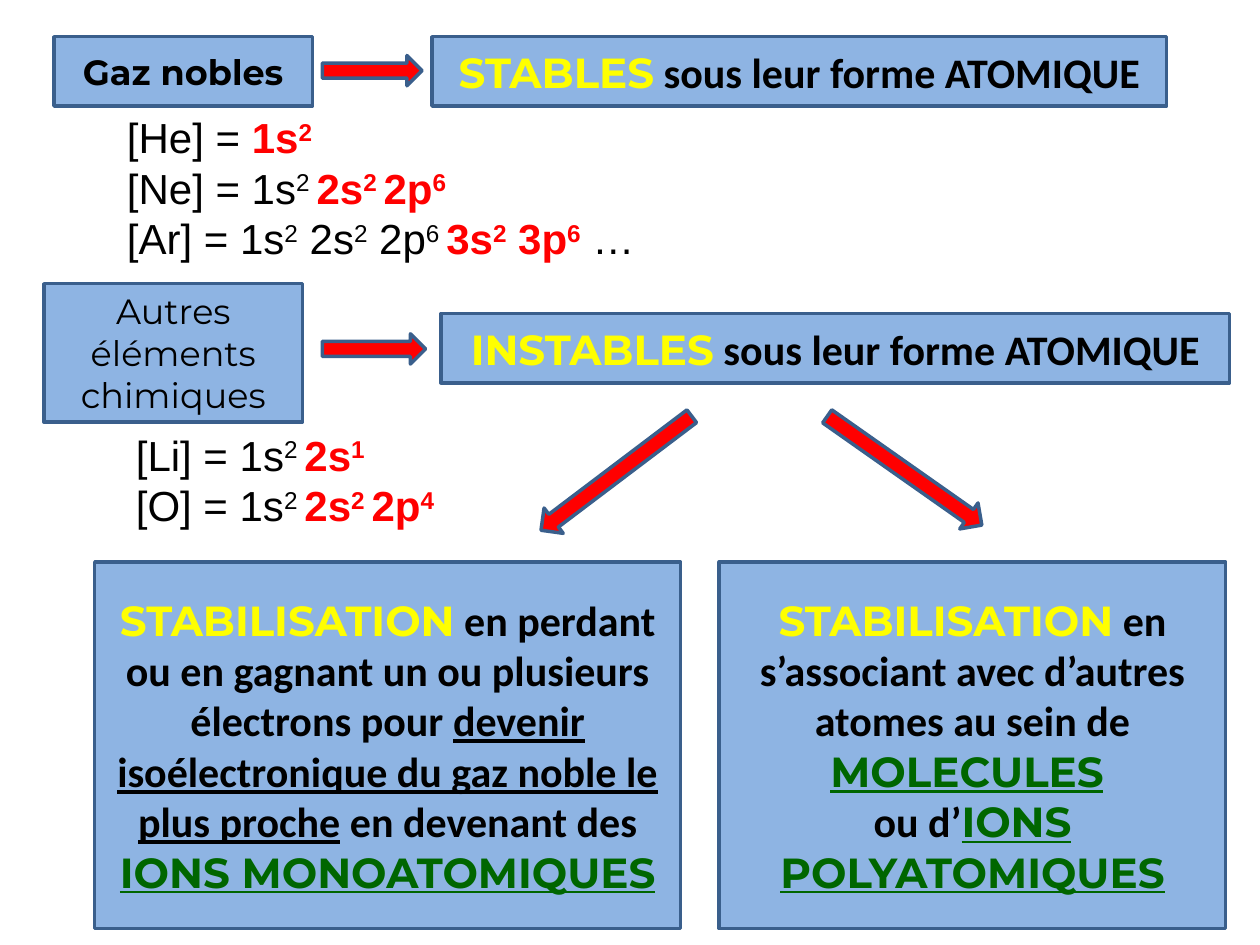
"""Build the slide on the stability of noble gases and other chemical elements."""
from dataclasses import dataclass

from pptx import Presentation
from pptx import util as u
from pptx.dml.color import RGBColor
from pptx.enum import shapes, text


@dataclass(frozen=True)
class Theme:
    """Colours, type sizes and text styles of the slide."""
    box: str = "8EB4E3"
    line: str = "3A5F8C"
    arrow: str = "FF0000"
    line_width: int = 2
    label: int = 20
    body: int = 24

    def style(self, name):
        """Return the font name, colour and format values of a text style."""
        return {
            "label": ("Montserrat", "000000", {"size": self.label}),
            "strong_label": ("Montserrat", "000000", {"size": self.label, "bold": True}),
            "key": ("Montserrat", "FFFF00", {"bold": True}),
            "plain": ("Calibri", "000000", {"bold": True}),
            "underlined": ("Calibri", "000000", {"bold": True, "underline": True}),
            "result": ("Montserrat", "006600", {"bold": True, "underline": True}),
            "space": ("Montserrat", "006600", {}),
            "core": ("Arial", "000000", {}),
            "valence": ("Arial", "FF0000", {"bold": True}),
        }[name]


THEME = Theme()


def add_run(p, words, style, raised=False):
    """Add one run in a named style, raised when it is an exponent."""
    name, colour, values = THEME.style(style)
    r = p.add_run()
    r.text = words
    r.font.color.rgb = RGBColor.from_string(colour)
    values = {"name": name, "size": THEME.body, **values}
    values["size"] = u.Pt(values["size"])
    for key, value in values.items():
        setattr(r.font, key, value)
    if raised:
        r._r.get_or_add_rPr().set("baseline", "30000")


def fill_text(tf, paragraphs, align):
    """Write paragraphs of (style, words) pairs; carets enclose exponents."""
    for i, parts in enumerate(paragraphs):
        p = tf.add_paragraph() if i else tf.paragraphs[0]
        p.alignment = align
        for style, words in parts:
            for j, piece in enumerate(words.split("^")):
                if piece:
                    add_run(p, piece, style, raised=j % 2 == 1)


def add_outlined(s, kind, place, colour):
    """Add a filled preset shape with the common outline."""
    sp = s.shapes.add_shape(kind, *map(u.Cm, place))
    sp.shadow.inherit = False
    sp.fill.solid()
    sp.fill.fore_color.rgb = RGBColor.from_string(colour)
    sp.line.color.rgb = RGBColor.from_string(THEME.line)
    sp.line.width = u.Pt(THEME.line_width)
    return sp


def add_box(s, place, *paragraphs):
    """Add a blue box with centred text."""
    tf = add_outlined(s, shapes.MSO_SHAPE.RECTANGLE, place, THEME.box).text_frame
    for key, value in {"word_wrap": True, "vertical_anchor": text.MSO_ANCHOR.MIDDLE}.items():
        setattr(tf, key, value)
    fill_text(tf, paragraphs, text.PP_ALIGN.CENTER)


def add_arrow(s, place, rotation=0):
    """Add a red block arrow, turned clockwise by the given degrees."""
    add_outlined(s, shapes.MSO_SHAPE.RIGHT_ARROW, place, THEME.arrow).rotation = rotation


def add_configurations(s, place, *paragraphs):
    """Add a list of electron configurations."""
    tf = s.shapes.add_textbox(*map(u.Cm, place)).text_frame
    for key, value in {"word_wrap": False,
                       "auto_size": text.MSO_AUTO_SIZE.SHAPE_TO_FIT_TEXT}.items():
        setattr(tf, key, value)
    fill_text(tf, paragraphs, text.PP_ALIGN.LEFT)


def add_noble_gases(s):
    """Add the row on noble gases."""
    add_box(s, (1.09, 0.74, 5.21, 1.4), [("strong_label", "Gaz nobles")])
    add_arrow(s, (6.5, 1.12, 2.01, 0.61))
    add_box(s, (8.71, 0.74, 14.81, 1.4),
            [("key", "STABLES"), ("plain", " sous leur forme ATOMIQUE")])
    add_configurations(
        s, (2.31, 2.13, 11.13, 3.33),
        [("core", "[He] = "), ("valence", "1s^2^")],
        [("core", "[Ne] = 1s^2 ^"), ("valence", "2s^2 ^2p^6^")],
        [("core", "[Ar] = 1s^2^ 2s^2^ 2p^6 ^"), ("valence", "3s^2^ 3p^6^"), ("core", " …")])


def add_other_elements(s):
    """Add the row on the other elements."""
    add_box(s, (0.89, 5.72, 5.21, 2.79), [("label", "Autres éléments chimiques")])
    add_arrow(s, (6.5, 6.73, 2.08, 0.61))
    add_box(s, (8.89, 6.32, 15.9, 1.4),
            [("key", "INSTABLES"), ("plain", " sous leur forme ATOMIQUE")])
    add_configurations(
        s, (2.49, 8.53, 6.88, 3.33),
        [("core", "[Li] = 1s^2 ^"), ("valence", "2s^1^")],
        [("core", "[O] = 1s^2 ^"), ("valence", "2s^2 ^2p^4^")])


def add_stabilisation(s):
    """Add the two ways to become stable."""
    add_arrow(s, (10.52, 9.22, 3.81, 0.64), 142.9)
    add_arrow(s, (16.33, 9.17, 3.81, 0.64), 35.1)
    add_box(s, (1.91, 11.33, 11.81, 7.39),
            [("key", "STABILISATION"),
             ("plain", " en perdant ou en gagnant un ou plusieurs électrons pour "),
             ("underlined", "devenir isoélectronique du gaz noble le plus proche"),
             ("plain", " en devenant des")],
            [("result", "IONS MONOATOMIQUES")])
    add_box(s, (14.5, 11.33, 10.21, 7.39),
            [("key", "STABILISATION"),
             ("plain", " en s’associant avec d’autres atomes au sein de "),
             ("result", "MOLECULES"), ("space", " ")],
            [("plain", "ou d’"), ("result", "IONS POLYATOMIQUES")])


def main():
    """Build and save the slide."""
    prs = Presentation()
    prs.slide_width, prs.slide_height = u.Cm(25.4), u.Cm(19.05)
    s = prs.slides.add_slide(prs.slide_layouts[6])
    add_noble_gases(s)
    add_other_elements(s)
    add_stabilisation(s)
    prs.save("out.pptx")


if __name__ == "__main__":
    main()
